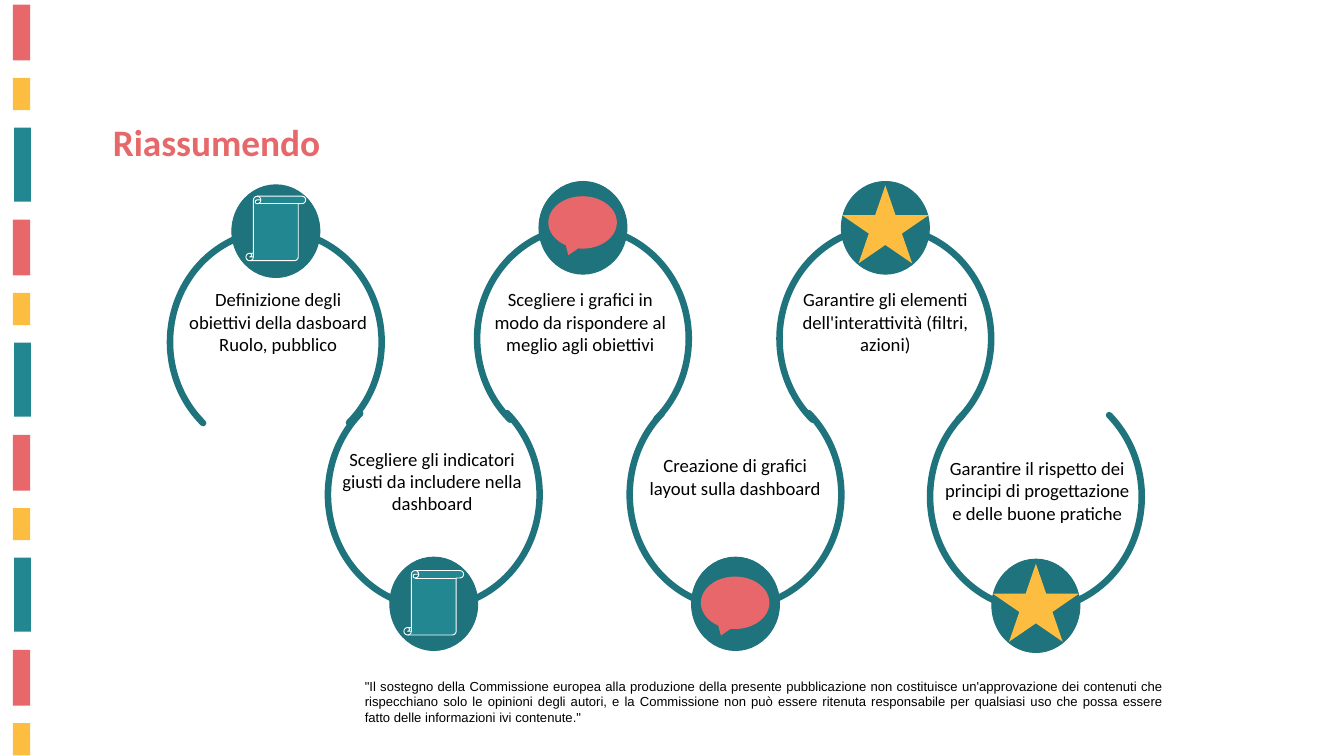
from dataclasses import dataclass

from pptx import Presentation
from pptx.dml.color import RGBColor
from pptx.enum.shapes import MSO_SHAPE
from pptx.enum.text import MSO_ANCHOR, PP_ALIGN
from pptx.util import Emu, Pt

RECTANGLE, ARC, OVAL = MSO_SHAPE.RECTANGLE, MSO_SHAPE.ARC, MSO_SHAPE.OVAL
SCROLL, STAR = MSO_SHAPE.VERTICAL_SCROLL, MSO_SHAPE.STAR_5_POINT
CALLOUT = MSO_SHAPE.OVAL_CALLOUT
LEFT, CENTER, JUSTIFY = PP_ALIGN.LEFT, PP_ALIGN.CENTER, PP_ALIGN.JUSTIFY
TOP = MSO_ANCHOR.TOP


@dataclass(frozen=True)
class Theme:
    coral: str = "E8676A"
    title: str = "E7686A"
    yellow: str = "FDBD40"
    teal: str = "238791"
    dark_teal: str = "1E737C"
    white: str = "FFFFFF"
    black: str = "000000"
    font: str = "Calibri"
    footer_font: str = "Arial"
    title_size: int = 40
    body_size: int = 20
    footer_size: int = 14
    ring_line: int = 7
    thin_line: int = 1


THEME = Theme()
PX = 9144  # 100 px to the inch
SLIDE_WIDTH, SLIDE_HEIGHT = 2000, 1125

TITLE = "Riassumendo"
FOOTER = (
    "\"Il sostegno della Commissione europea alla produzione della presente "
    "pubblicazione non costituisce un'approvazione dei contenuti che rispecchiano "
    "solo le opinioni degli autori, e la Commissione non può essere ritenuta "
    "responsabile per qualsiasi uso che possa essere fatto delle informazioni ivi "
    "contenute.\""
)

# Steps: paragraphs, text box, ring left and top, icon, icon top
STEPS = [
    (["Definizione degli obiettivi della dasboard", "Ruolo, pubblico"],
     (269, 424, 290, 111), (253, 343), SCROLL, 292),
    (["Scegliere gli indicatori giusti da includere nella dashboard"],
     (489, 661, 308, 111), (488, 568), SCROLL, 849),
    (["Scegliere i grafici in modo da rispondere al meglio agli obiettivi"],
     (714, 424, 299, 111), (710, 338), CALLOUT, 292),
    (["Creazione di grafici layout sulla dashboard"],
     (949, 671, 290, 111), (937, 568), CALLOUT, 858),
    (["Garantire gli elementi dell'interattività (filtri, azioni)"],
     (1180, 424, 275, 145), (1160, 338), STAR, 276),
    (["Garantire il rispetto dei principi di progettazione e delle buone pratiche"],
     (1389, 675, 309, 111), (1384, 571), STAR, 839),
]

# Icons: width, height, fill, line
ICONS = {
    SCROLL: (89, 96, THEME.teal, THEME.white),
    CALLOUT: (102, 78, THEME.coral, None),
    STAR: (129, 116, THEME.yellow, None),
}

# Stripes repeated down the left edge: left, top, width, height, colour
STRIPES = [
    (19, 7, 26, 83, THEME.coral),
    (19, 116, 26, 48, THEME.yellow),
    (21, 190, 25, 110, THEME.teal),
]
STRIPE_PERIOD = 320

RING_WIDTH, BADGE_WIDTH = 315, 131
# Ring height, badge offset from the ring top, badge height, rotation
UPPER_RING = (332, -68, 138, 0)
LOWER_RING = (336, 261, 139, 180)
RING_ANGLES = (79.141, 28.684)


def add_shape(slide, kind, box, fill=None, line=None, line_width=THEME.thin_line):
    shape = slide.shapes.add_shape(kind, *(Emu(length * PX) for length in box))
    shape.shadow.inherit = False
    if fill:
        shape.fill.solid()
        shape.fill.fore_color.rgb = RGBColor.from_string(fill)
    else:
        shape.fill.background()
    if line:
        shape.line.color.rgb = RGBColor.from_string(line)
        shape.line.width = Pt(line_width)
    else:
        shape.line.fill.background()
    return shape


def add_text(slide, box, paragraphs, size, align, font=THEME.font,
             color=THEME.black, bold=False):
    text_box = slide.shapes.add_textbox(*(Emu(length * PX) for length in box))
    frame = text_box.text_frame
    frame.word_wrap = True
    frame.vertical_anchor = TOP
    for index, text in enumerate(paragraphs):
        paragraph = frame.add_paragraph() if index else frame.paragraphs[0]
        paragraph.alignment = align
        run = paragraph.add_run()
        run.text = text
        run.font.name = font
        run.font.size = Pt(size)
        run.font.bold = bold
        run.font.color.rgb = RGBColor.from_string(color)


def add_stripes(slide):
    for offset in range(0, SLIDE_HEIGHT, STRIPE_PERIOD):
        for left, top, width, height, color in STRIPES:
            if top + offset < SLIDE_HEIGHT:
                add_shape(slide, RECTANGLE, (left, top + offset, width, height), color)


def add_ring(slide, left, top, ring):
    """Draw an open ring with its round badge and return the badge's left edge."""
    height, badge_offset, badge_height, rotation = ring
    arc = add_shape(slide, ARC, (left, top, RING_WIDTH, height),
                    line=THEME.dark_teal, line_width=THEME.ring_line)
    arc.adjustments[0], arc.adjustments[1] = RING_ANGLES
    arc.rotation = rotation
    arc.line._get_or_add_ln().set("cap", "rnd")
    badge_left = left + (RING_WIDTH - BADGE_WIDTH) // 2
    add_shape(slide, OVAL, (badge_left, top + badge_offset, BADGE_WIDTH, badge_height),
              THEME.dark_teal, THEME.dark_teal)
    return badge_left


def add_step(slide, index, step):
    paragraphs, text_box, (left, top), icon, icon_top = step
    badge_left = add_ring(slide, left, top, LOWER_RING if index % 2 else UPPER_RING)
    add_text(slide, text_box, paragraphs, THEME.body_size, CENTER)
    width, height, fill, line = ICONS[icon]
    icon_left = badge_left + (BADGE_WIDTH - width) // 2
    add_shape(slide, icon, (icon_left, icon_top, width, height), fill, line)


def main():
    presentation = Presentation()
    presentation.slide_width = Emu(SLIDE_WIDTH * PX)
    presentation.slide_height = Emu(SLIDE_HEIGHT * PX)
    slide = presentation.slides.add_slide(presentation.slide_layouts[6])

    add_stripes(slide)
    add_text(slide, (533, 1004, 1208, 81), [FOOTER], THEME.footer_size, JUSTIFY,
             font=THEME.footer_font)
    add_text(slide, (158, 172, 658, 77), [TITLE], THEME.title_size, LEFT,
             color=THEME.title, bold=True)
    # Lower rings go first, so the upper ones lie over their ends
    for index in (1, 3, 4, 2, 0, 5):
        add_step(slide, index, STEPS[index])

    presentation.save("out.pptx")


if __name__ == "__main__":
    main()
